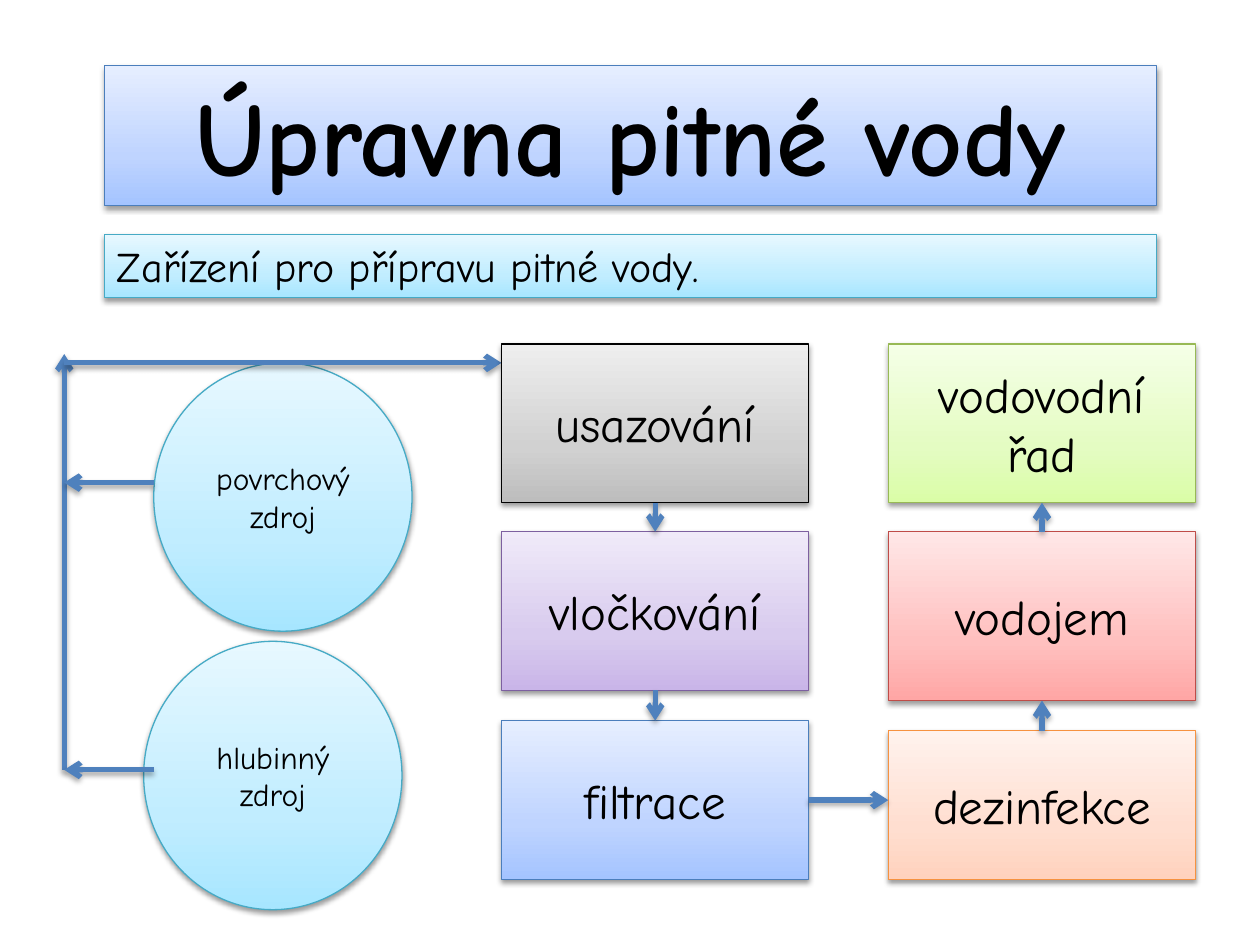
import copy
from dataclasses import dataclass

import lxml.etree
import pptx
import pptx.dml.color
import pptx.enum.shapes
import pptx.enum.text
import pptx.oxml.ns
import pptx.util

Inches = pptx.util.Inches
Pt = pptx.util.Pt
qn = pptx.oxml.ns.qn
Shapes = pptx.enum.shapes.MSO_SHAPE
Align = pptx.enum.text.PP_ALIGN
Anchor = pptx.enum.text.MSO_ANCHOR
AutoSize = pptx.enum.text.MSO_AUTO_SIZE

FONT = "Comic Neue"
ARROW_COLOR = "4F81BD"
TOP, LEFT, BOTTOM, RIGHT = range(4)
STEP_WIDTH = 2.44
PIPE_X = 0.51
FIRST_COLUMN, SECOND_COLUMN = 3.98, 7.05


@dataclass(frozen=True)
class Palette:
    outline: str
    stops: tuple[str, str, str]


@dataclass(frozen=True)
class Block:
    text: str
    left: float
    top: float
    width: float
    height: float
    palette: Palette
    size: int


BLUE = Palette("4B7EBC", ("A4C4FF", "BFD4FF", "E6EEFF"))
AQUA = Palette("46AAC5", ("A7E6FF", "C1EDFF", "E7F8FF"))
GRAY = Palette("000000", ("BDBDBD", "D1D1D1", "EEEEEE"))
PURPLE = Palette("7D60A0", ("C9B5E8", "D8CBEE", "F0EAF9"))
ORANGE = Palette("F69240", ("FFD2BD", "FFDED0", "FFF2ED"))
RED = Palette("BF4C48", ("FFA6A5", "FFC0BF", "FFE7E7"))
GREEN = Palette("98B955", ("DAFDA7", "E4FCC2", "F5FFE7"))

TITLE = Block("Úpravna pitné vody", 0.83, 0.52, 8.35, 1.11, BLUE, 60)
SUBTITLE = Block("Zařízení pro přípravu pitné vody.", 0.83, 1.86, 8.35, 0.5, AQUA, 24)
SOURCES = [
    Block("povrchový zdroj", 1.22, 2.88, 2.05, 2.13, AQUA, 18),
    Block("hlubinný zdroj", 1.14, 5.09, 2.05, 2.13, AQUA, 18),
]
STEPS = [
    Block(text, left, top, STEP_WIDTH, height, palette, 28)
    for text, left, top, height, palette in [
        ("usazování", FIRST_COLUMN, 2.73, 1.26, GRAY),
        ("vločkování", FIRST_COLUMN, 4.22, 1.26, PURPLE),
        ("filtrace", FIRST_COLUMN, 5.72, 1.26, BLUE),
        ("dezinfekce", SECOND_COLUMN, 5.8, 1.18, ORANGE),
        ("vodojem", SECOND_COLUMN, 4.22, 1.34, RED),
        ("vodovodní řad", SECOND_COLUMN, 2.73, 1.26, GREEN),
    ]
]
PIPES = [
    ((PIPE_X, 6.11), (PIPE_X, 2.81)),
    ((1.22, 3.83), (PIPE_X, 3.83)),
    ((1.22, 6.11), (PIPE_X, 6.11)),
    ((PIPE_X, 2.88), (FIRST_COLUMN, 2.88)),
]


def color(value: str):
    """Turn a hex string into a colour."""
    return pptx.dml.color.RGBColor.from_string(value)


def add_shadow(properties, distance: float, opacity: int) -> None:
    """Give shape properties a soft shadow that falls downwards."""
    effects = properties.find(qn("a:effectLst"))
    if effects is None:
        effects = lxml.etree.SubElement(properties, qn("a:effectLst"))
    shadow = lxml.etree.SubElement(
        effects, qn("a:outerShdw"), blurRad=str(Pt(3.1)), dist=str(Pt(distance)),
        dir="5400000", rotWithShape="0",
    )
    shade = lxml.etree.SubElement(shadow, qn("a:srgbClr"), val="000000")
    lxml.etree.SubElement(shade, qn("a:alpha"), val=str(opacity * 1000))


def fill_gradient(shape, stops: tuple[str, str, str]) -> None:
    """Fill a shape with three colours from bottom to top."""
    shape.fill.gradient()
    shape.fill.gradient_angle = 90
    stop_list = shape.element.spPr.find(qn("a:gradFill")).find(qn("a:gsLst"))
    stop_list.append(copy.deepcopy(stop_list[-1]))
    for stop, position, value in zip(shape.fill.gradient_stops, (0, 0.35, 1), stops):
        stop.position = position
        stop.color.rgb = color(value)


def write(shape, text: str, *, size: int, bold: bool = False, align=Align.CENTER,
          anchor=Anchor.MIDDLE, grow: bool = False) -> None:
    """Put formatted text into a shape."""
    frame = shape.text_frame
    frame.word_wrap = True
    frame.vertical_anchor = anchor
    if grow:
        frame.auto_size = AutoSize.SHAPE_TO_FIT_TEXT
    para = frame.paragraphs[0]
    para.alignment = align
    span = para.add_run()
    span.text = text
    span.font.name = FONT
    span.font.size = Pt(size)
    span.font.bold = bold
    span.font.color.rgb = color("000000")


def add_block(page, block: Block, kind=Shapes.RECTANGLE, **text_format):
    """Draw a shaded shape with its text."""
    shape = page.shapes.add_shape(
        kind, Inches(block.left), Inches(block.top), Inches(block.width), Inches(block.height)
    )
    fill_gradient(shape, block.palette.stops)
    shape.line.color.rgb = color(block.palette.outline)
    shape.line.width = Pt(0.75)
    shape.shadow.inherit = False
    add_shadow(shape.element.spPr, 1.6, 38)
    write(shape, block.text, size=block.size, **text_format)
    return shape


def add_arrow(page, start: tuple[float, float], end: tuple[float, float]):
    """Draw a straight arrow between two points."""
    arrow = page.shapes.add_connector(
        pptx.enum.shapes.MSO_CONNECTOR.STRAIGHT, *map(Inches, (*start, *end))
    )
    arrow.line.color.rgb = color(ARROW_COLOR)
    arrow.line.width = Pt(3)
    lxml.etree.SubElement(arrow.line._get_or_add_ln(), qn("a:tailEnd"), type="arrow")
    add_shadow(arrow.element.spPr, 1.8, 35)
    return arrow


def join(page, first, first_side: int, second, second_side: int) -> None:
    """Join the middles of two box sides with an arrow."""
    arrow = add_arrow(page, (0, 0), (0, 0))
    arrow.begin_connect(first, first_side)
    arrow.end_connect(second, second_side)


def main() -> None:
    """Build the slide and save it."""
    deck = pptx.Presentation()
    deck.slide_width, deck.slide_height = Inches(10), Inches(7.5)
    page = deck.slides.add_slide(deck.slide_layouts[6])

    add_block(page, TITLE, bold=True, anchor=Anchor.TOP, grow=True)
    add_block(page, SUBTITLE, align=Align.LEFT, anchor=Anchor.TOP, grow=True)
    for source in SOURCES:
        add_block(page, source, Shapes.OVAL)
    for start, end in PIPES:
        add_arrow(page, start, end)

    settling, flocculation, filtration, disinfection, reservoir, network = [
        add_block(page, step) for step in STEPS
    ]
    join(page, settling, BOTTOM, flocculation, TOP)
    join(page, flocculation, BOTTOM, filtration, TOP)
    join(page, disinfection, TOP, reservoir, BOTTOM)
    join(page, reservoir, TOP, network, BOTTOM)
    crossing = add_arrow(page, (FIRST_COLUMN + STEP_WIDTH, 6.35), (SECOND_COLUMN, 6.35))
    crossing.begin_connect(filtration, RIGHT)
    deck.save("out.pptx")


if __name__ == "__main__":
    main()
